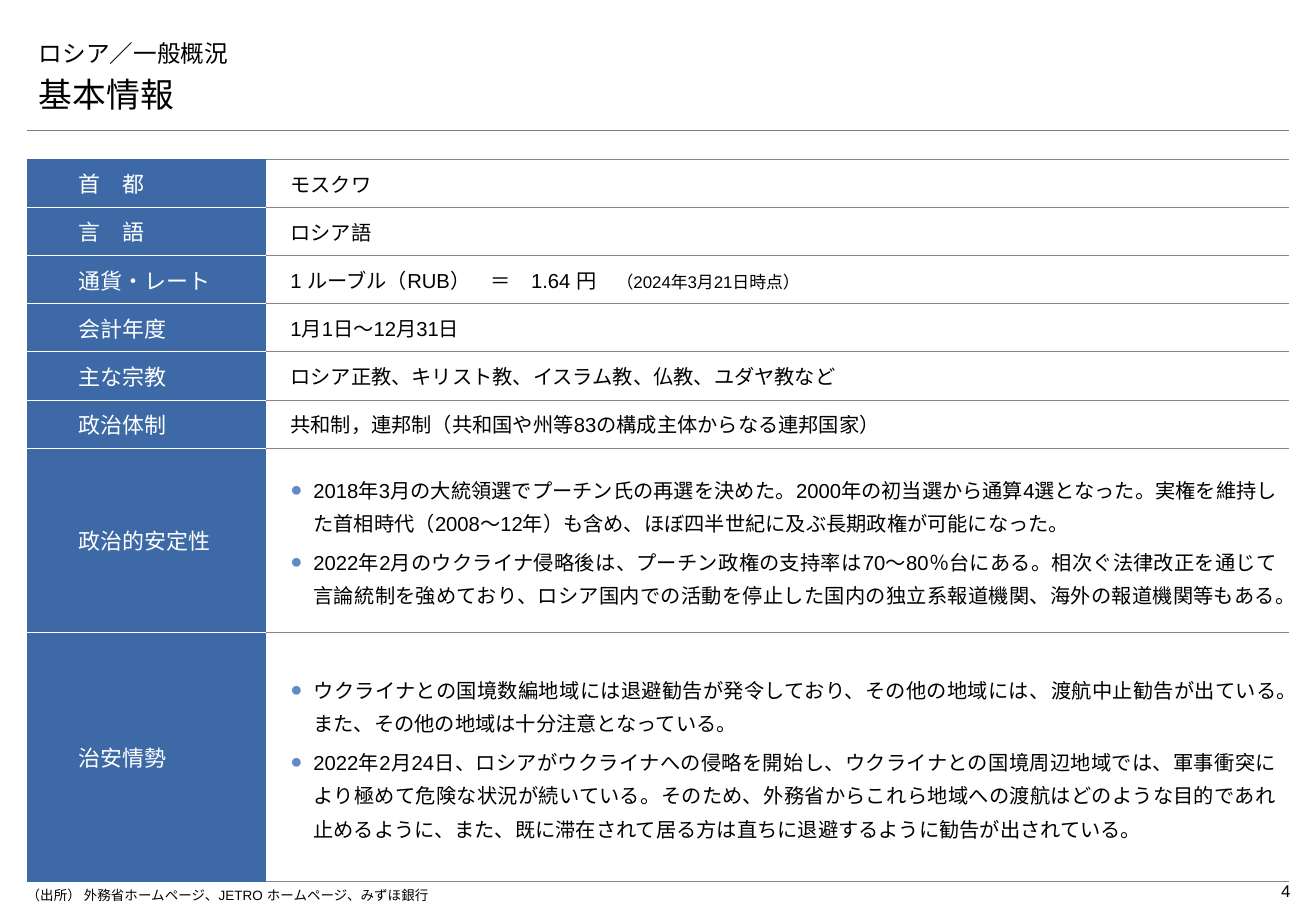
from lxml import etree
from pptx import Presentation
from pptx.dml.color import RGBColor as Rgb
from pptx.enum.shapes import MSO_CONNECTOR as Conn
from pptx.enum.text import MSO_ANCHOR as Anchor, PP_ALIGN as Align
from pptx.oxml.ns import qn
from pptx.util import Inches as In, Pt

HEX = {"ink": "000000", "white": "FFFFFF", "blue": "3D6AA7",
       "dot": "5F8AC3", "grid": "868686", "rule": "7F7F7F"}
CJK = "Noto Sans CJK JP"
BARE = "{2D5ABB26-0587-4C30-8999-92F81FD0307C}"

BODY = {"size": 12, "name": "Arial", "color": "ink"}
LABEL = {"size": 13, "name": CJK, "color": "white"}
NOTE = {**BODY, "size": 10}
WARN = {**BODY, "name": CJK}
HEAD = {"size": 14, "name": "Montserrat", "color": "ink"}
TITLE = {**HEAD, "size": 20}
SOURCE = {**BODY, "size": 8}

FACTS = [
    ("首　都", [("モスクワ", BODY)]),
    ("言　語", [("ロシア語", BODY)]),
    ("通貨・レート", [("1 ルーブル（RUB）　＝　1.64 円　", BODY),
                ("（2024年3月21日時点）", NOTE)]),
    ("会計年度", [("1月1日～12月31日", BODY)]),
    ("主な宗教", [("ロシア正教、キリスト教、イスラム教、仏教、ユダヤ教など", BODY)]),
    ("政治体制", [("共和制，連邦制（共和国や州等83の構成主体からなる連邦国家）", BODY)]),
]
TOPICS = [
    ("政治的安定性", 1.08, [
        [("2018年3月の大統領選でプーチン氏の再選を決めた。2000年の初当選から通算4選となった。"
          "実権を維持した首相時代（2008～12年）も含め、ほぼ四半世紀に及ぶ長期政権が可能になった。", BODY)],
        [("2022年2月のウクライナ侵略後は、プーチン政権の支持率は70～80％台にある。"
          "相次ぐ法律改正を通じて言論統制を強めており、"
          "ロシア国内での活動を停止した国内の独立系報道機関、海外の報道機関等もある。", BODY)],
    ]),
    ("治安情勢", 2.05, [
        [("ウクライナとの国境数編地域には退避勧告が発令しており、その他の地域には、", BODY),
         ("渡航中止勧告", WARN),
         ("が出ている。また、その他の地域は十分注意となっている。", BODY)],
        [("2022年2月24日、ロシアがウクライナへの侵略を開始し、"
          "ウクライナとの国境周辺地域では、軍事衝突により極めて危険な状況が続いている。"
          "そのため、外務省からこれら地域への渡航はどのような目的であれ止めるように、"
          "また、既に滞在されて居る方は直ちに退避するように勧告が出されている。", BODY)],
    ]),
]

WIDE, HIGH = 10.83, 7.5
LEFT, SPAN = 0.22, 10.39
TOP, TALL, SIDE = 1.31, 5.51, 1.97

BOXES = [
    ("ロシア／一般概況", HEAD, (LEFT, 0.21, SPAN, 0.39), (0.1, 0.05), Anchor.BOTTOM, Align.LEFT),
    ("基本情報", TITLE, (LEFT, 0.6, SPAN, 0.39), (0.1, 0.05), Anchor.BOTTOM, Align.LEFT),
    ("（出所） 外務省ホームページ、JETRO ホームページ、みずほ銀行", SOURCE,
     (LEFT, 7.3, 7.87, 0.2), (0, 0), Anchor.TOP, Align.LEFT),
    ("4", NOTE, (9.83, 7.2, 0.79, 0.27), (0, 0.05), Anchor.TOP, Align.RIGHT),
]


def tint(name):
    return Rgb.from_string(HEX[name])


def node(root, tag, **attrs):
    return etree.SubElement(root, qn(tag), attrs)


def assign(item, vals):
    for key, val in vals.items():
        setattr(item, key, val)


def write(para, runs, align=Align.LEFT):
    para.alignment = align
    for text, look in runs:
        run = para.add_run()
        run.text = text
        run.font.color.rgb = tint(look["color"])
        assign(run.font, {"size": Pt(look["size"]), "name": look["name"]})
        node(run.font._element, "a:ea", typeface=CJK)


def bullet(para):
    props = para._p.get_or_add_pPr()
    props.set("marL", str(In(0.19)))
    props.set("indent", str(-In(0.19)))
    node(node(props, "a:buClr"), "a:srgbClr", val=HEX["dot"])
    node(props, "a:buFont", typeface="Arial")
    node(props, "a:buChar", char="●")
    assign(para, {"line_spacing": 1.14, "space_after": Pt(3)})


def border(cell, over, under):
    props = cell._tc.get_or_add_tcPr()
    edges = [("a:lnL", None), ("a:lnR", None), ("a:lnT", over), ("a:lnB", under)]
    for spot, (tag, name) in enumerate(edges):
        edge = etree.Element(qn(tag), w=str(Pt(0.5)))
        if name:
            node(node(edge, "a:solidFill"), "a:srgbClr", val=HEX[name])
        else:
            node(edge, "a:noFill")
        props.insert(spot, edge)


def pad(cell, left, right):
    assign(cell, {"margin_left": In(left), "margin_right": In(right),
                  "margin_top": In(0.05), "margin_bottom": In(0.05),
                  "vertical_anchor": Anchor.MIDDLE})


def add_box(slide, text, look, area, inset, anchor, align):
    frame = slide.shapes.add_textbox(*map(In, area)).text_frame
    side, edge = map(In, inset)
    assign(frame, {"word_wrap": True, "vertical_anchor": anchor,
                   "margin_left": side, "margin_right": side,
                   "margin_top": edge, "margin_bottom": edge})
    write(frame.paragraphs[0], [(text, look)], align)


def add_rule(slide):
    ends = (LEFT, 1.07, LEFT + SPAN, 1.07)
    rule = slide.shapes.add_connector(Conn.STRAIGHT, *map(In, ends))
    rule.line.color.rgb = tint("rule")
    rule.line.width = Pt(0.25)
    node(rule._element.spPr, "a:effectLst")


def add_grid(slide):
    fact = (TALL - sum(high for _, high, _ in TOPICS)) / len(FACTS)
    rows = [(label, fact, [runs], False) for label, runs in FACTS]
    rows += [(*topic, True) for topic in TOPICS]
    area = (LEFT, TOP, SPAN, TALL)
    grid = slide.shapes.add_table(len(rows), 2, *map(In, area)).table
    assign(grid, {"first_row": False, "horz_banding": False})
    grid._tbl.tblPr.find(qn("a:tableStyleId")).text = BARE
    for col, wide in zip(grid.columns, (SIDE, SPAN - SIDE)):
        col.width = In(wide)
    last = len(rows) - 1
    for num, (label, high, paras, dots) in enumerate(rows):
        grid.rows[num].height = In(high)
        name, info = grid.cell(num, 0), grid.cell(num, 1)
        pad(name, 0.43, 0.43)
        pad(info, 0.2, 0.1)
        name.fill.solid()
        name.fill.fore_color.rgb = tint("blue")
        info.fill.background()
        border(name, "white" if num else "blue", "white" if num < last else "blue")
        border(info, "grid", "grid")
        write(name.text_frame.paragraphs[0], [(label, LABEL)], Align.JUSTIFY)
        frame = info.text_frame
        for pos, runs in enumerate(paras):
            para = frame.add_paragraph() if pos else frame.paragraphs[0]
            if dots:
                bullet(para)
            write(para, runs, Align.JUSTIFY if dots else Align.LEFT)


def main():
    deck = Presentation()
    assign(deck, {"slide_width": In(WIDE), "slide_height": In(HIGH)})
    slide = deck.slides.add_slide(deck.slide_layouts[6])
    add_rule(slide)
    add_grid(slide)
    for box in BOXES:
        add_box(slide, *box)
    deck.save("out.pptx")


if __name__ == "__main__":
    main()
